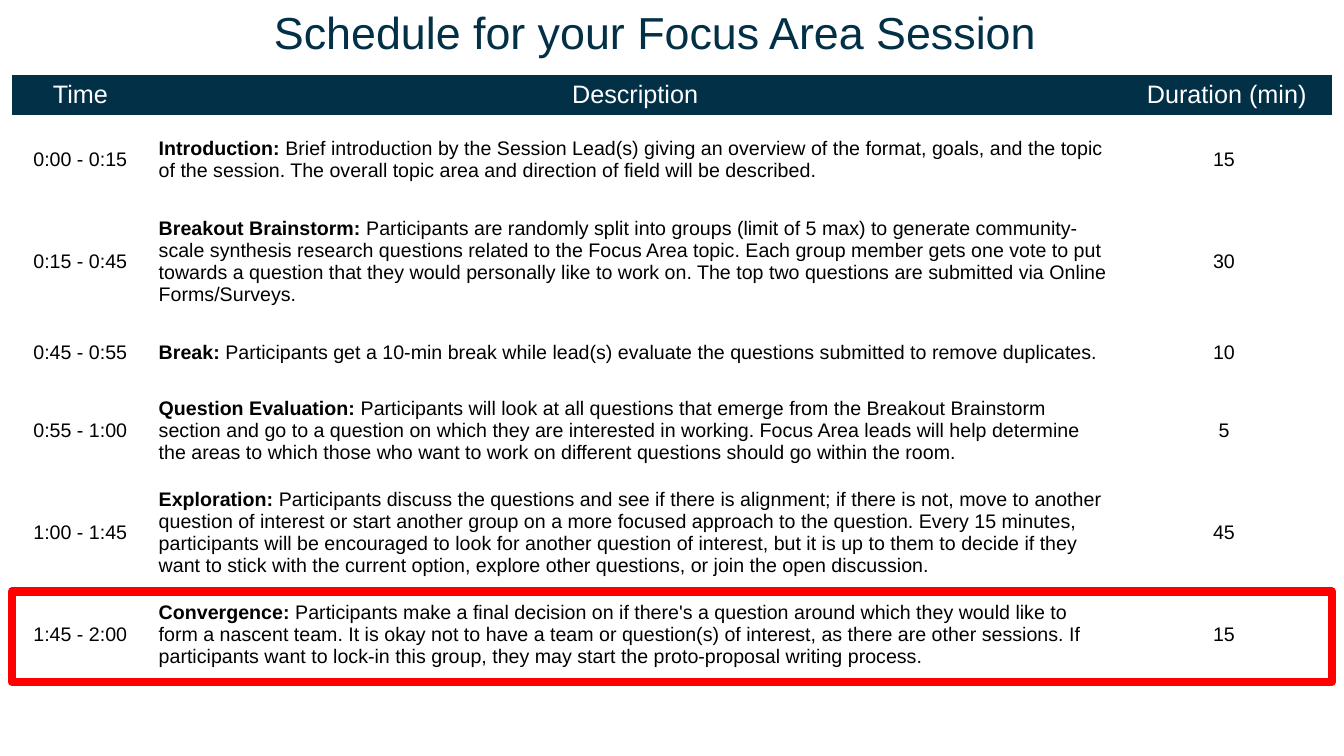
from pptx import Presentation
from pptx.dml.color import RGBColor as Color
from pptx.enum.shapes import MSO_SHAPE as Shape
from pptx.enum.text import MSO_ANCHOR as Anchor, MSO_AUTO_SIZE as AutoSize, PP_ALIGN as Align
from pptx.util import Cm, Pt

COLORS = {"navy": "023047", "white": "FFFFFF", "black": "000000", "red": "FF0000"}
NO_STYLE = "{2D5ABB26-0587-4C30-8999-92F81FD0307C}"

HEADINGS = ["Time", "Description", "Duration (min)"]
SESSIONS = [
    ("0:00 - 0:15", "Introduction:",
     "Brief introduction by the Session Lead(s) giving an overview of the format, goals, "
     "and the topic of the session. The overall topic area and direction of field will be "
     "described.", 15),
    ("0:15 - 0:45", "Breakout Brainstorm:",
     "Participants are randomly split into groups (limit of 5 max) to generate "
     "community-scale synthesis research questions related to the Focus Area topic. Each "
     "group member gets one vote to put towards a question that they would personally like "
     "to work on. The top two questions are submitted via Online Forms/Surveys.", 30),
    ("0:45 - 0:55", "Break:",
     "Participants get a 10-min break while lead(s) evaluate the questions submitted to "
     "remove duplicates.", 10),
    ("0:55 - 1:00", "Question Evaluation:",
     "Participants will look at all questions that emerge from the Breakout Brainstorm "
     "section and go to a question on which they are interested in working. Focus Area "
     "leads will help determine the areas to which those who want to work on different "
     "questions should go within the room.", 5),
    ("1:00 - 1:45", "Exploration:",
     "Participants discuss the questions and see if there is alignment; if there is not, "
     "move to another question of interest or start another group on a more focused approach "
     "to the question. Every 15 minutes, participants will be encouraged to look for another "
     "question of interest, but it is up to them to decide if they want to stick with the "
     "current option, explore other questions, or join the open discussion.", 45),
    ("1:45 - 2:00", "Convergence:",
     "Participants make a final decision on if there's a question around which they would "
     "like to form a nascent team. It is okay not to have a team or question(s) of interest, "
     "as there are other sessions. If participants want to lock-in this group, they may start "
     "the proto-proposal writing process.", 15),
]
COLUMN_WIDTHS = [3.45, 24.51, 5.31]
ROW_HEIGHTS = [1.02, 2.27, 2.86, 1.69, 2.27, 2.86, 2.27]
TABLE_LEFT, TABLE_TOP = 0.3, 1.88


class SlideBuilder:
    font_name = "Arial"

    def __init__(self, slide):
        self.slide = slide

    def color(self, name):
        return Color.from_string(COLORS[name])

    def style(self, paragraph, size, color, align):
        paragraph.alignment = align
        paragraph.font.name = self.font_name
        paragraph.font.size = Pt(size)
        paragraph.font.color.rgb = self.color(color)

    def title(self, text, left, top, width, height):
        title = self.slide.shapes.title
        title.left, title.top, title.width, title.height = map(Cm, (left, top, width, height))
        frame = title.text_frame
        frame.text = text
        frame.auto_size = AutoSize.NONE
        frame.vertical_anchor = Anchor.TOP
        self.style(frame.paragraphs[0], 32, "navy", Align.LEFT)

    def table(self, left, top, widths, heights):
        frame = self.slide.shapes.add_table(
            len(heights), len(widths), Cm(left), Cm(top), Cm(sum(widths)), Cm(sum(heights)))
        table = frame.table
        table.horz_banding = False
        frame._element.xpath(".//a:tableStyleId")[0].text = NO_STYLE
        for column, width in zip(table.columns, widths):
            column.width = Cm(width)
        for row, height in zip(table.rows, heights):
            row.height = Cm(height)
        return table

    def cell(self, cell, text, lead="", header=False, align=Align.CENTER):
        cell.vertical_anchor = Anchor.MIDDLE
        cell.margin_left = cell.margin_right = Cm(0.25)
        cell.margin_top = cell.margin_bottom = Cm(0.13 if header else 0.25)
        if header:
            cell.fill.solid()
            cell.fill.fore_color.rgb = self.color("navy")
        else:
            cell.fill.background()
        paragraph = cell.text_frame.paragraphs[0]
        if lead:
            run = paragraph.add_run()
            run.text = lead
            run.font.bold = True
        paragraph.add_run().text = text
        self.style(paragraph, 18 if header else 14, "white" if header else "black", align)

    def outline(self, left, top, width, height):
        shape = self.slide.shapes.add_shape(
            Shape.RECTANGLE, Cm(left), Cm(top), Cm(width), Cm(height))
        shape.shadow.inherit = False
        shape.fill.background()
        shape.line.color.rgb = self.color("red")
        shape.line.width = Pt(6)


def main():
    presentation = Presentation()
    presentation.slide_width, presentation.slide_height = Cm(33.87), Cm(19.05)
    builder = SlideBuilder(presentation.slides.add_slide(presentation.slide_layouts[5]))
    builder.title("Schedule for your Focus Area Session", 6.65, 0, 23.06, 1.63)

    table = builder.table(TABLE_LEFT, TABLE_TOP, COLUMN_WIDTHS, ROW_HEIGHTS)
    for column, heading in enumerate(HEADINGS):
        builder.cell(table.cell(0, column), heading, header=True)
    for row, (time, name, description, minutes) in enumerate(SESSIONS, start=1):
        builder.cell(table.cell(row, 0), time)
        builder.cell(table.cell(row, 1), f" {description}", lead=name, align=Align.LEFT)
        builder.cell(table.cell(row, 2), f"{minutes} ")

    builder.outline(TABLE_LEFT, 14.91, sum(COLUMN_WIDTHS), ROW_HEIGHTS[-1])
    presentation.save("out.pptx")


if __name__ == "__main__":
    main()
